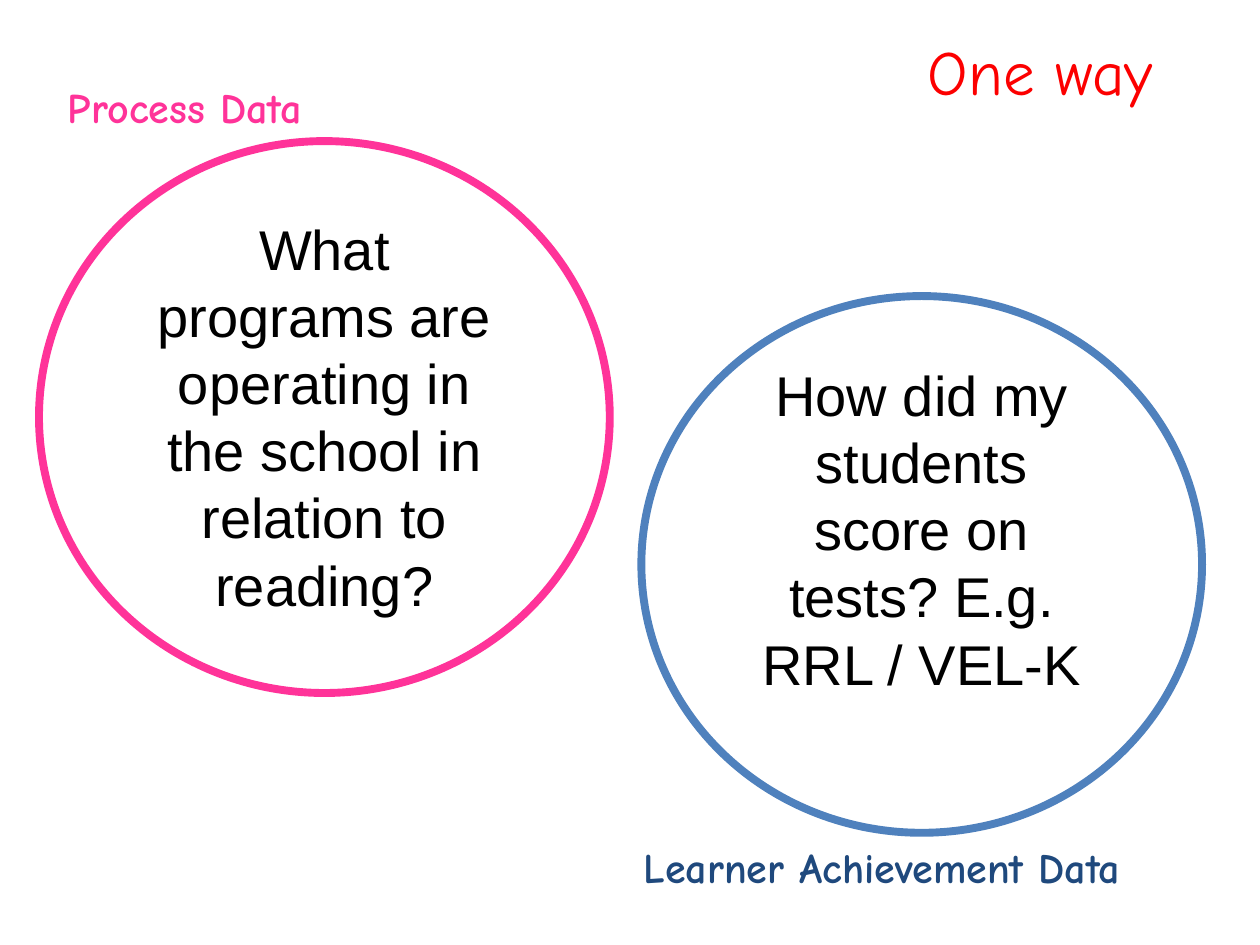
import pptx
import pptx.dml.color
import pptx.enum.shapes
import pptx.enum.text
import pptx.util

Inches = pptx.util.Inches
ALIGN = pptx.enum.text.PP_ALIGN
ANCHOR = pptx.enum.text.MSO_ANCHOR

THEME = {
    "process": "FF3399",
    "learner_ring": "4F81BD",
    "learner_label": "1F497D",
    "title": "FC0000",
    "question": "000000",
    "heading_font": "Comic Neue",
    "body_font": "Arial",
    "title_size": 36,
    "question_size": 32,
    "label_size": 24,
}


def color(name):
    return pptx.dml.color.RGBColor.from_string(THEME[name])


def write_text(shape, text, *, font, size, fill, bold=False,
               align=ALIGN.LEFT, anchor=ANCHOR.TOP):
    frame = shape.text_frame
    frame.word_wrap = True
    frame.vertical_anchor = anchor
    frame.auto_size = pptx.enum.text.MSO_AUTO_SIZE.NONE
    paragraph = frame.paragraphs[0]
    paragraph.alignment = align
    run = paragraph.add_run()
    run.text = text
    run.font.name = THEME[font]
    run.font.size = pptx.util.Pt(THEME[size])
    run.font.bold = bold
    run.font.color.rgb = color(fill)


presentation = pptx.Presentation()
presentation.slide_width = Inches(10)
presentation.slide_height = Inches(7.5)
slide = presentation.slides.add_slide(presentation.slide_layouts[5])

# Title
title = slide.shapes.title
title.left, title.top = Inches(6.57), Inches(0.21)
title.width, title.height = Inches(2.68), Inches(0.7)
write_text(title, "One way", font="heading_font", size="title_size",
           fill="title", align=ALIGN.RIGHT, anchor=ANCHOR.MIDDLE)

# Each data type: a ring, its label and the question inside
data_types = [
    {
        "ring": (0.31, 1.12, 4.53, 4.38), "ring_color": "process",
        "label": "Process Data", "label_box": (0.44, 0.6, 2.6, 0.5),
        "label_color": "process",
        "question": "What programs are operating in the school in relation to reading?",
        "question_box": (1.08, 1.65, 2.99, 3.33),
    },
    {
        "ring": (5.09, 2.35, 4.45, 4.26), "ring_color": "learner_ring",
        "label": "Learner Achievement Data", "label_box": (5.01, 6.63, 4.82, 0.5),
        "label_color": "learner_label",
        "question": "How did my students score on tests? E.g. RRL / VEL-K",
        "question_box": (5.82, 2.81, 2.99, 2.79),
    },
]
for data in data_types:
    ring = slide.shapes.add_shape(pptx.enum.shapes.MSO_SHAPE.OVAL,
                                  *map(Inches, data["ring"]))
    ring.shadow.inherit = False
    ring.fill.background()
    ring.line.color.rgb = color(data["ring_color"])
    ring.line.width = pptx.util.Pt(4.5)

    label = slide.shapes.add_textbox(*map(Inches, data["label_box"]))
    write_text(label, data["label"], font="heading_font", size="label_size",
               fill=data["label_color"], bold=True)

    question = slide.shapes.add_textbox(*map(Inches, data["question_box"]))
    write_text(question, data["question"], font="body_font", size="question_size",
               fill="question", align=ALIGN.CENTER)

presentation.save("out.pptx")
